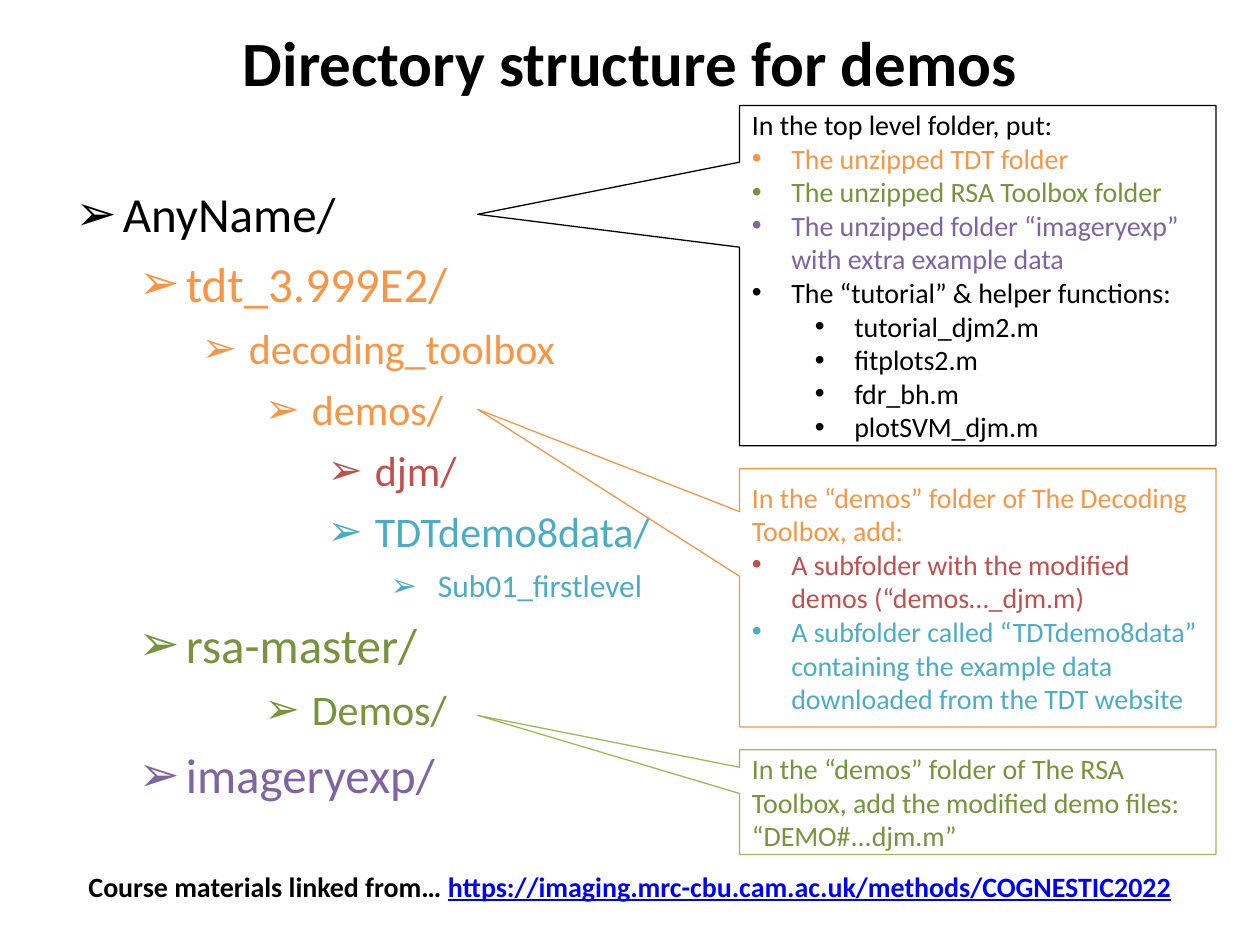
from pptx import Presentation
from pptx.dml.color import RGBColor
from pptx.enum.shapes import MSO_SHAPE
from pptx.enum.text import MSO_ANCHOR, MSO_AUTO_SIZE, PP_ALIGN
from pptx.oxml.ns import qn
from pptx.util import Pt
from lxml.etree import SubElement

BLACK = RGBColor(0x00, 0x00, 0x00)
ORANGE = RGBColor(0xF7, 0x96, 0x46)
RED = RGBColor(0xC0, 0x50, 0x4D)
TEAL = RGBColor(0x4B, 0xAC, 0xC6)
GREEN = RGBColor(0x77, 0x93, 0x3C)
LIGHT_GREEN = RGBColor(0x9B, 0xBB, 0x59)
PURPLE = RGBColor(0x80, 0x64, 0xA2)
LINK_BLUE = RGBColor(0x00, 0x00, 0xFF)

FONT = "Calibri"
LEVEL_STEP = 36
MARGIN = 36
CALLOUT_LEFT = 422.6
CALLOUT_WIDTH = 272.2

FOLDERS = [
    ("AnyName/", 0, 28, BLACK),
    ("tdt_3.999E2/", 1, 28, ORANGE),
    ("decoding_toolbox", 2, 24, ORANGE),
    ("demos/", 3, 24, ORANGE),
    ("djm/", 4, 24, RED),
    ("TDTdemo8data/", 4, 24, TEAL),
    ("Sub01_firstlevel", 5, 18, TEAL),
    ("rsa-master/", 1, 28, GREEN),
    ("Demos/", 3, 24, GREEN),
    ("imageryexp/", 1, 28, PURPLE),
]

TOP_FOLDER_NOTES = [
    ("In the top level folder, put:", None, BLACK),
    ("The unzipped TDT folder", 0, ORANGE),
    ("The unzipped RSA Toolbox folder", 0, GREEN),
    ("The unzipped folder “imageryexp” with extra example data", 0, PURPLE),
    ("The “tutorial” & helper functions:", 0, BLACK),
    ("tutorial_djm2.m", 1, BLACK),
    ("fitplots2.m", 1, BLACK),
    ("fdr_bh.m", 1, BLACK),
    ("plotSVM_djm.m", 1, BLACK),
]
DECODING_NOTES = [
    ("In the “demos” folder of The Decoding Toolbox, add:", None, ORANGE),
    ("A subfolder with the modified demos (“demos…_djm.m)", 0, RED),
    ("A subfolder called “TDTdemo8data” containing the example data "
     "downloaded from the TDT website", 0, TEAL),
]
RSA_NOTES = [
    ("In the “demos” folder of The RSA Toolbox, add the modified demo files: \v"
     "“DEMO#...djm.m”", None, GREEN),
]


def place(shape, left, top, width, height):
    shape.left, shape.top = Pt(left), Pt(top)
    shape.width, shape.height = Pt(width), Pt(height)


def format_run(run, size, color, bold=False, underline=False):
    run.font.name = FONT
    run.font.size = Pt(size)
    run.font.bold = bold
    run.font.underline = underline
    run.font.color.rgb = color


def add_bullet(paragraph, character, level, hanging):
    paragraph.level = level
    properties = paragraph._p.get_or_add_pPr()
    properties.set("marL", str(Pt(level * LEVEL_STEP + hanging)))
    properties.set("indent", str(-Pt(hanging)))
    SubElement(properties, qn("a:buFont"), typeface="Arial")
    SubElement(properties, qn("a:buChar"), char=character)


def next_paragraph(text_frame, index):
    return text_frame.add_paragraph() if index else text_frame.paragraphs[0]


def set_title(slide, text):
    title = slide.shapes.title
    place(title, MARGIN, 21.6, 648, 27.4)
    text_frame = title.text_frame
    text_frame.text = text
    text_frame.auto_size = MSO_AUTO_SIZE.NONE
    text_frame.vertical_anchor = MSO_ANCHOR.MIDDLE
    paragraph = text_frame.paragraphs[0]
    paragraph.alignment = PP_ALIGN.CENTER
    format_run(paragraph.runs[0], 36, BLACK, bold=True)


def fill_folder_tree(slide):
    body = slide.placeholders[1]
    place(body, MARGIN, 101.5, 601.2, 372.2)
    text_frame = body.text_frame
    text_frame.auto_size = MSO_AUTO_SIZE.NONE
    for index, (text, level, size, color) in enumerate(FOLDERS):
        paragraph = next_paragraph(text_frame, index)
        paragraph.text = text
        add_bullet(paragraph, "➢", level, 27)
        paragraph.space_before = Pt(0)
        paragraph.space_after = Pt(6)
        format_run(paragraph.runs[0], size, color)


def add_callout(slide, top, height, pointer, line_color, notes):
    callout = slide.shapes.add_shape(
        MSO_SHAPE.RECTANGULAR_CALLOUT,
        Pt(CALLOUT_LEFT), Pt(top), Pt(CALLOUT_WIDTH), Pt(height))
    callout.adjustments[0], callout.adjustments[1] = pointer
    callout.shadow.inherit = False
    callout.fill.background()
    callout.line.color.rgb = line_color
    callout.line.width = Pt(0.75)
    text_frame = callout.text_frame
    text_frame.word_wrap = True
    text_frame.vertical_anchor = MSO_ANCHOR.MIDDLE
    for index, (text, level, color) in enumerate(notes):
        paragraph = next_paragraph(text_frame, index)
        paragraph.text = text
        paragraph.alignment = PP_ALIGN.LEFT
        if level is not None:
            add_bullet(paragraph, "•", level, 22.5)
        for run in paragraph.runs:
            format_run(run, 16, color)


def add_source_line(slide, label, address):
    box = slide.shapes.add_textbox(Pt(MARGIN), Pt(492.5), Pt(648), Pt(27.4))
    text_frame = box.text_frame
    text_frame.word_wrap = True
    text_frame.vertical_anchor = MSO_ANCHOR.MIDDLE
    paragraph = text_frame.paragraphs[0]
    paragraph.alignment = PP_ALIGN.CENTER
    for text, color, underline in [(label, BLACK, False), (address, LINK_BLUE, True)]:
        run = paragraph.add_run()
        run.text = text
        format_run(run, 16, color, bold=True, underline=underline)


def main():
    presentation = Presentation()
    presentation.slide_width, presentation.slide_height = Pt(720), Pt(540)
    slide = presentation.slides.add_slide(presentation.slide_layouts[1])
    set_title(slide, "Directory structure for demos")
    fill_folder_tree(slide)
    add_callout(slide, 60.3, 194.4, (-1.05, -0.18), BLACK, TOP_FOLDER_NOTES)
    add_callout(slide, 267.8, 147.6, (-1.05, -0.73), ORANGE, DECODING_NOTES)
    add_callout(slide, 428.5, 59.8, (-1.05, -0.83), LIGHT_GREEN, RSA_NOTES)
    add_source_line(slide, "Course materials linked from… ",
                    "https://imaging.mrc-cbu.cam.ac.uk/methods/COGNESTIC2022")
    presentation.save("out.pptx")


if __name__ == "__main__":
    main()
